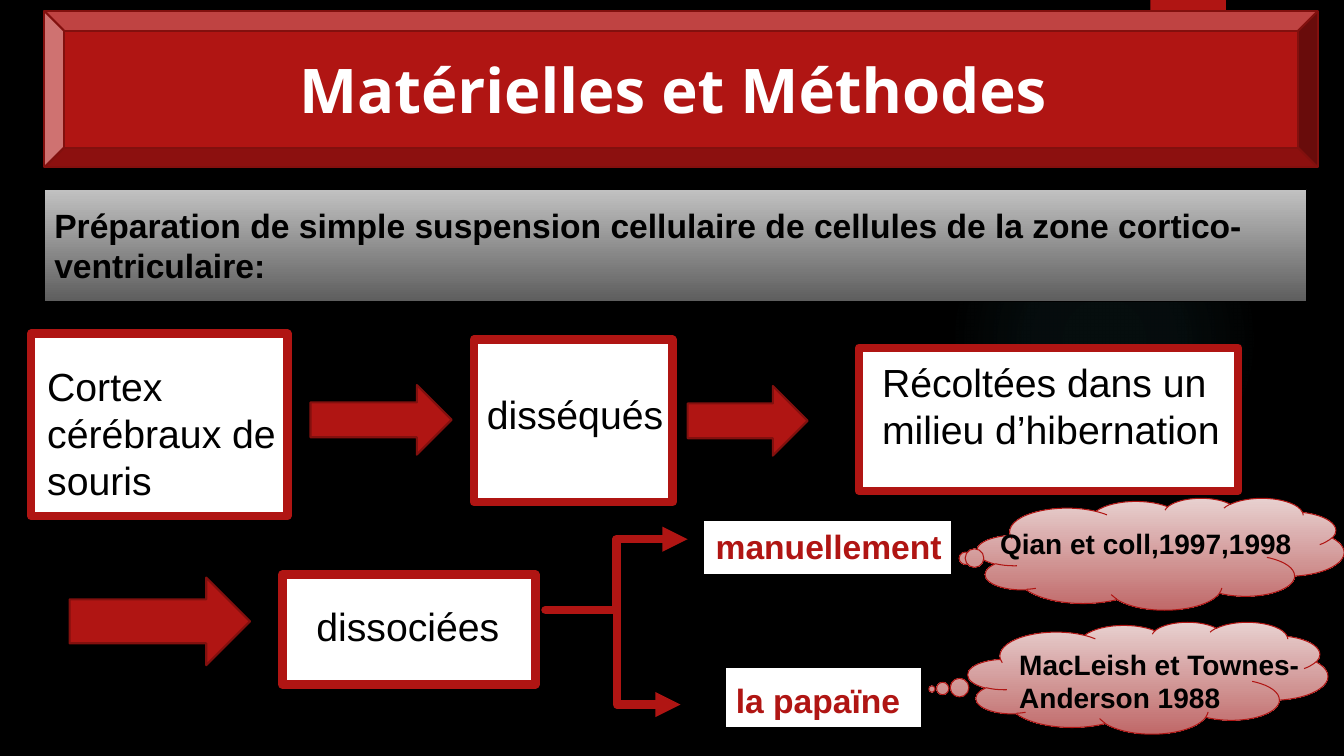
from dataclasses import dataclass
from typing import Optional

from lxml import etree
from pptx import Presentation
from pptx import util as u
from pptx.dml.color import RGBColor
from pptx.enum import shapes, text
from pptx.oxml import parse_xml
from pptx.oxml.ns import qn

COLOURS = {
    "black": "000000", "white": "FFFFFF", "red": "B01513", "dark_red": "82100E",
    "cloud_top": "E8D1D0", "cloud_bottom": "C06969",
    "band_top": "C1C1C1", "band_bottom": "5E5E5E", "glow": "50B9C1",
}
KIND = shapes.MSO_SHAPE
Box = tuple[float, float, float, float]


@dataclass
class Panel:
    box: Box
    kind: KIND = KIND.FLOWCHART_PROCESS
    fill: tuple[str, ...] = ("white",)
    line: Optional[str] = "red"
    width: float = 6
    pointer: tuple[float, ...] = ()


@dataclass
class Label:
    words: str
    box: Box
    size: float = 28
    colour: str = "black"
    bold: bool = False
    wrap: bool = True


def rgb(name: str) -> RGBColor:
    return RGBColor.from_string(COLOURS[name])


def inches(values) -> list:
    return [u.Inches(value) for value in values]


def write(frame, words: str, *, size: float, colour: str, font: str = "Arial",
          bold: bool = False, wrap: bool = True, align=text.PP_ALIGN.LEFT,
          anchor=text.MSO_ANCHOR.TOP, fit=text.MSO_AUTO_SIZE.NONE) -> None:
    frame.text = words
    frame.word_wrap = wrap
    frame.auto_size = fit
    frame.vertical_anchor = anchor
    paragraph = frame.paragraphs[0]
    paragraph.alignment = align
    style = paragraph.runs[0].font
    style.name, style.size, style.bold = font, u.Pt(size), bold
    style.color.rgb = rgb(colour)


def draw_panel(slide, panel: Panel):
    shape = slide.shapes.add_shape(panel.kind, *inches(panel.box))
    shape.shadow.inherit = False
    if len(panel.fill) == 2:
        shape.fill.gradient()
        shape.fill.gradient_angle = 270
        for stop, position, colour in zip(shape.fill.gradient_stops, (0, 1), panel.fill):
            stop.position = position
            stop.color.rgb = rgb(colour)
    else:
        shape.fill.solid()
        shape.fill.fore_color.rgb = rgb(panel.fill[0])
    if panel.line:
        shape.line.color.rgb = rgb(panel.line)
        shape.line.width = u.Pt(panel.width)
    else:
        shape.line.fill.background()
    for index, value in enumerate(panel.pointer):
        shape.adjustments[index] = value
    return shape


def draw_label(slide, label: Label) -> None:
    frame = slide.shapes.add_textbox(*inches(label.box)).text_frame
    write(frame, label.words, size=label.size, colour=label.colour, bold=label.bold,
          wrap=label.wrap, fit=text.MSO_AUTO_SIZE.SHAPE_TO_FIT_TEXT)


def draw_branch(slide, ends: Box) -> None:
    branch = slide.shapes.add_connector(shapes.MSO_CONNECTOR.ELBOW, *inches(ends))
    branch.line.color.rgb = rgb("red")
    branch.line.width = u.Pt(6)
    line = branch.line._get_or_add_ln()
    line.set("cap", "rnd")
    etree.SubElement(line, qn("a:round"))
    etree.SubElement(line, qn("a:tailEnd"), type="triangle")
    etree.SubElement(branch._element.spPr, qn("a:effectLst"))


def draw_glow(slide) -> None:
    glow = draw_panel(slide, Panel((9.41, 1.83, 3.08, 3.08), KIND.OVAL, ("glow",), None))
    stops = "".join(
        f'<a:gs pos="{position}000"><a:srgbClr val="{COLOURS["glow"]}">'
        f'<a:alpha val="{alpha}000"/></a:srgbClr></a:gs>'
        for position, alpha in ((0, 7), (36, 6), (69, 0), (100, 0)))
    gradient = parse_xml(
        '<a:gradFill xmlns:a="http://schemas.openxmlformats.org/drawingml/2006/main">'
        f'<a:gsLst>{stops}</a:gsLst><a:path path="circle">'
        '<a:fillToRect l="50000" t="50000" r="50000" b="50000"/></a:path></a:gradFill>')
    properties = glow._element.spPr
    properties.replace(properties.find(qn("a:solidFill")), gradient)


CLOUD = {"kind": KIND.CLOUD_CALLOUT, "fill": ("cloud_top", "cloud_bottom"), "width": 0.75}
METHOD = {"line": "black", "width": 4.5}
ARROW = {"kind": KIND.RIGHT_ARROW, "fill": ("red",), "line": "dark_red", "width": 1.5}
TITLE_BOX = (0.44, 0.11, 12.63, 1.55)

PANELS = [
    Panel((11.41, 0, 0.75, 1.25), KIND.RECTANGLE, ("red",), None),
    # Methods and their references
    Panel((9.6, 6.17, 3.57, 1.11), pointer=(-0.6, 0.1), **CLOUD),
    Panel((7.17, 6.6, 2, 0.64), **METHOD),
    Panel((9.69, 4.94, 3.64, 1.11), pointer=(-0.54, 0.04), **CLOUD),
    Panel((6.95, 5.14, 2.51, 0.59), **METHOD),
    # Steps
    Panel((2.8, 5.7, 2.51, 1.09)),
    Panel((8.52, 3.45, 3.76, 1.42)),
    Panel((4.7, 3.37, 1.97, 1.61)),
    Panel((0.31, 3.31, 2.54, 1.81)),
    # Heading band and title plate
    Panel((0.44, 1.88, 12.52, 1.11), KIND.RECTANGLE, ("band_top", "band_bottom"), "black", 0.75),
    Panel(TITLE_BOX, KIND.BEVEL, ("red",), "dark_red", 1.5),
    # Arrows between steps
    Panel((3.08, 3.82, 1.4, 0.69), **ARROW),
    Panel((6.82, 3.83, 1.19, 0.69), **ARROW),
    Panel((0.69, 5.73, 1.79, 0.87), **ARROW),
]

LABELS = [
    Label("Préparation de simple suspension cellulaire de cellules de la zone "
          "cortico-ventriculaire:", (0.44, 1.98, 12.72, 0.91), 24, bold=True),
    Label("Cortex cérébraux de souris", (0.37, 3.54, 2.73, 1.51)),
    Label("disséqués", (4.73, 3.82, 1.97, 0.57), wrap=False),
    Label("Récoltées dans un milieu d’hibernation", (8.65, 3.51, 4.25, 1.04)),
    Label("dissociées", (3.04, 5.93, 2.04, 0.57), wrap=False),
    Label("manuellement", (7, 5.17, 2.47, 0.5), 24, "red", True, False),
    Label("la papaïne", (7.2, 6.7, 1.94, 0.5), 24, "red", True, False),
    Label("Qian et coll,1997,1998", (9.82, 5.17, 3.19, 0.44), 20, bold=True, wrap=False),
    Label("MacLeish et Townes-Anderson 1988", (10.01, 6.37, 3.48, 0.77), 20, bold=True),
]

BRANCHES = [(5.41, 6.05, 6.82, 5.35), (5.49, 6.05, 6.75, 6.99)]


def main() -> None:
    deck = Presentation()
    deck.slide_width, deck.slide_height = inches((13.33, 7.5))
    slide = deck.slides.add_slide(deck.slide_layouts[5])
    slide.background.fill.solid()
    slide.background.fill.fore_color.rgb = rgb("black")

    draw_glow(slide)
    for panel in PANELS:
        draw_panel(slide, panel)

    # Title, brought in front of its plate
    title = slide.shapes.title
    title.left, title.top, title.width, title.height = inches(TITLE_BOX)
    write(title.text_frame, "Matérielles et Méthodes ", size=44, colour="white",
          font="Noto Sans", bold=True, align=text.PP_ALIGN.CENTER,
          anchor=text.MSO_ANCHOR.MIDDLE)
    slide.shapes._spTree.append(title._element)

    for label in LABELS:
        draw_label(slide, label)
    for ends in BRANCHES:
        draw_branch(slide, ends)

    deck.save("out.pptx")


if __name__ == "__main__":
    main()
